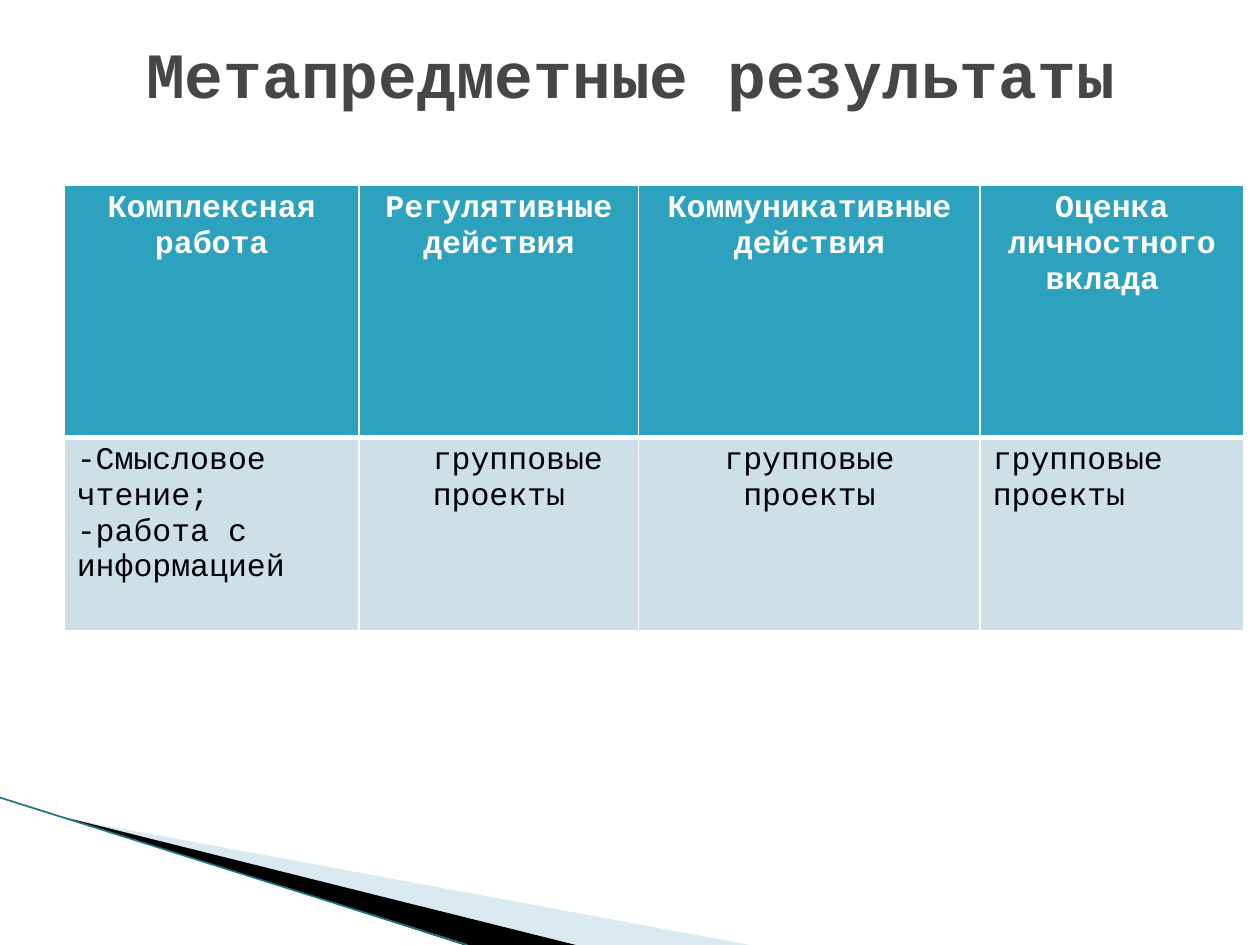
from lxml import etree
from pptx import Presentation
from pptx.dml.color import RGBColor
from pptx.enum.shapes import MSO_CONNECTOR
from pptx.enum.text import MSO_ANCHOR, PP_ALIGN
from pptx.oxml.ns import qn
from pptx.util import Inches, Pt

LEFT, CENTER = PP_ALIGN.LEFT, PP_ALIGN.CENTER
TOP = MSO_ANCHOR.TOP
STRAIGHT = MSO_CONNECTOR.STRAIGHT
FONT = "Courier New"


def rgb(value):
    return RGBColor.from_string(value)


def add_border(cell, side, width):
    line = etree.SubElement(cell._tc.get_or_add_tcPr(), qn(f"a:ln{side}"), w=str(Pt(width)))
    fill = etree.SubElement(line, qn("a:solidFill"))
    etree.SubElement(fill, qn("a:srgbClr"), val="FFFFFF")


prs = Presentation()
prs.slide_width, prs.slide_height = Inches(10), Inches(7.5)
slide = prs.slides.add_slide(prs.slide_layouts[5])

# Corner wedges: outline, colour, opacity in percent
wedges = [
    ([(0.55, 6.5), (5.95, 7.5), (4.56, 7.5)], "A0CBDC", 40),
    ([(0.53, 6.49), (4.57, 7.5), (3.68, 7.5)], "000000", 100),
]
for points, color, opacity in wedges:
    corners = [(Inches(x), Inches(y)) for x, y in points]
    builder = slide.shapes.build_freeform(*corners[0])
    builder.add_line_segments(corners[1:], close=True)
    wedge = builder.convert_to_shape()
    wedge.shadow.inherit = False
    wedge.line.fill.background()
    wedge.fill.solid()
    wedge.fill.fore_color.rgb = rgb(color)
    if opacity < 100:
        tint = wedge._element.spPr.find(f".//{qn('a:srgbClr')}")
        etree.SubElement(tint, qn("a:alpha"), val=str(opacity * 1000))

# Thin edge along the wedges
edge = slide.shapes.add_connector(STRAIGHT, 0, Inches(6.33), Inches(3.71), Inches(7.5))
edge.line.color.rgb = rgb("1B7587")
edge.line.width = Pt(0.95)
etree.SubElement(edge._element.spPr, qn("a:effectLst"))

# Title
title = slide.shapes.title
title.left, title.top = Inches(0.51), Inches(0.27)
title.width, title.height = Inches(9), Inches(0.94)
title_frame = title.text_frame
title_frame.text = "Метапредметные результаты"
title_frame.vertical_anchor = TOP
title_frame.margin_top = 0
heading = title_frame.paragraphs[0]
heading.alignment = CENTER
heading.font.name = FONT
heading.font.size = Pt(36.9)
heading.font.bold = True
heading.font.color.rgb = rgb("464646")

# Table of results: text and alignment of each cell
rows = [
    [("Комплексная работа", CENTER), ("Регулятивные действия", CENTER),
     ("Коммуникативные\nдействия", CENTER), ("Оценка личностного вклада ", CENTER)],
    [("-Смысловое чтение;\n-работа с информацией", LEFT), ("групповые проекты", CENTER),
     ("групповые проекты", CENTER), ("групповые проекты", LEFT)],
]
# Row height, fill, text colour, bold, top and bottom border
row_styles = [
    (2, "2DA2BF", "FFFFFF", True, 1, 3),
    (1.54, "CDE0E8", "000000", False, 3, 1),
]
column_widths = [2.34, 2.22, 2.71, 2.09]

results = slide.shapes.add_table(
    len(rows), len(column_widths), Inches(0.51), Inches(1.47),
    Inches(sum(column_widths)), Inches(3.54)).table
for column, width in zip(results.columns, column_widths):
    column.width = Inches(width)

for r, (entries, style) in enumerate(zip(rows, row_styles)):
    height, fill_color, text_color, bold, top_width, bottom_width = style
    results.rows[r].height = Inches(height)
    for c, (text, alignment) in enumerate(entries):
        cell = results.cell(r, c)
        for side, width in (("L", 1), ("R", 1), ("T", top_width), ("B", bottom_width)):
            add_border(cell, side, width)
        cell.fill.solid()
        cell.fill.fore_color.rgb = rgb(fill_color)
        cell.text_frame.text = text
        for paragraph in cell.text_frame.paragraphs:
            paragraph.alignment = alignment
            for run in paragraph.runs:
                run.font.name = FONT
                run.font.size = Pt(18)
                run.font.bold = bold
                run.font.color.rgb = rgb(text_color)

# First-line indent in the regulatory actions cell
regulatory = results.cell(1, 1).text_frame.paragraphs[0]
regulatory._p.get_or_add_pPr().set("indent", str(Inches(0.3)))

prs.save("out.pptx")
